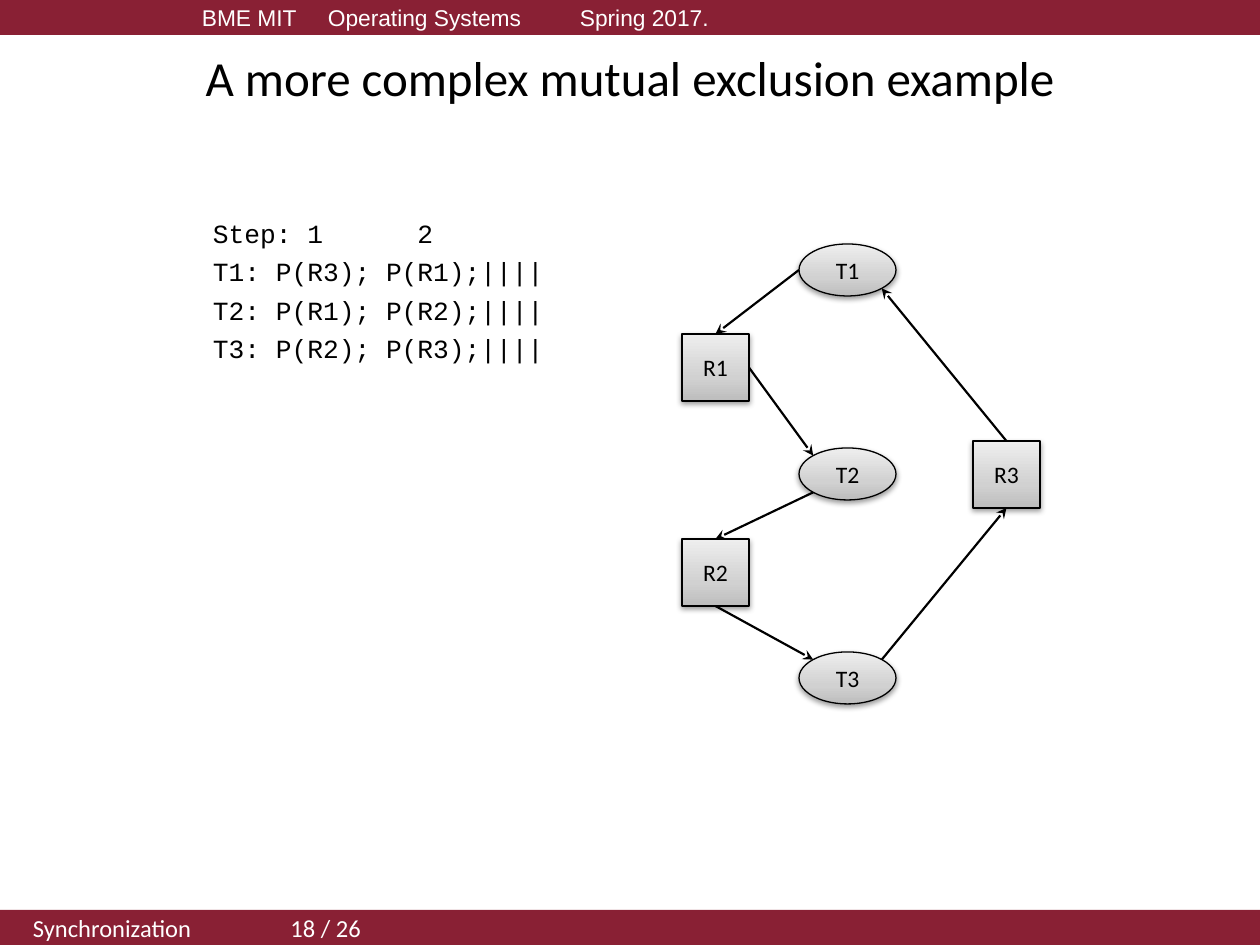
from lxml import etree
from pptx import Presentation
from pptx.dml.color import RGBColor
from pptx.enum.shapes import MSO_CONNECTOR, MSO_SHAPE
from pptx.enum.text import MSO_ANCHOR, PP_ALIGN
from pptx.oxml import parse_xml
from pptx.oxml.ns import qn
from pptx.util import Pt

PX = 914400 / 126
RECT, OVAL = MSO_SHAPE.RECTANGLE, MSO_SHAPE.OVAL
STRAIGHT = MSO_CONNECTOR.STRAIGHT
LEFT, CENTER = PP_ALIGN.LEFT, PP_ALIGN.CENTER
TOP, MIDDLE = MSO_ANCHOR.TOP, MSO_ANCHOR.MIDDLE

COLORS = {"bar": "892034", "ink": "000000", "paper": "FFFFFF",
          "dark": "BDBDBD", "mid": "D1D1D1", "light": "EEEEEE"}
NS = 'xmlns:a="http://schemas.openxmlformats.org/drawingml/2006/main"'
GRADIENT = (f'<a:gradFill {NS} rotWithShape="1"><a:gsLst>'
            + "".join(f'<a:gs pos="{pos}"><a:srgbClr val="{COLORS[name]}"/></a:gs>'
                      for pos, name in ((0, "dark"), (35000, "mid"), (100000, "light")))
            + '</a:gsLst><a:lin ang="16200000" scaled="1"/></a:gradFill>')
SHADOW = (f'<a:effectLst {NS}><a:outerShdw blurRad="40000" dist="20000" dir="5400000" '
          f'rotWithShape="0"><a:srgbClr val="{COLORS["ink"]}"><a:alpha val="38000"/>'
          '</a:srgbClr></a:outerShdw></a:effectLst>')

NODES = {
    "T1": (OVAL, 117, 0), "T2": (OVAL, 117, 204), "T3": (OVAL, 117, 408),
    "R1": (RECT, 0, 90), "R2": (RECT, 0, 295), "R3": (RECT, 291, 197),
}
NODE_SIZES = {OVAL: (97, 52), RECT: (67, 67)}
EDGES = [
    ("R3", "top", "T1", "bottom right"),
    ("R1", "right", "T2", "top left"),
    ("R2", "bottom", "T3", "top left"),
    ("T1", "left", "R1", "top"),
    ("T2", "bottom left", "R2", "top"),
    ("T3", "top right", "R3", "bottom"),
]
SIDES = {"left": (-1, 0), "right": (1, 0), "top": (0, -1), "bottom": (0, 1)}


def emu(*lengths):
    return [round(v * PX) for v in lengths]


def rgb(name):
    return RGBColor.from_string(COLORS[name])


def write(sp, text, size, font="Calibri", color="ink", align=CENTER, anchor=MIDDLE,
          margins=(13, 6), indent=0, space=0):
    tf = sp.text_frame
    tf.word_wrap = True
    tf.vertical_anchor = anchor
    tf.margin_left, tf.margin_top = emu(*margins)
    tf.margin_right, tf.margin_bottom = emu(*margins)
    for i, line in enumerate(text.split("\n")):
        p = tf.paragraphs[0] if i == 0 else tf.add_paragraph()
        p.alignment = align
        p.space_before = Pt(space if i else 0)
        if indent:
            p._p.get_or_add_pPr().set("marL", str(emu(indent)[0]))
        r = p.add_run()
        r.text = line
        r.font.size = Pt(size)
        r.font.name = font
        r.font.color.rgb = rgb(color)


def add_bar(s, box, text, size, **fmt):
    sp = s.shapes.add_shape(RECT, *emu(*box))
    sp.shadow.inherit = False
    sp.fill.solid()
    sp.fill.fore_color.rgb = rgb("bar")
    sp.line.fill.background()
    write(sp, text, size, color="paper", align=LEFT, **fmt)


def add_text(s, box, text, size, **fmt):
    write(s.shapes.add_textbox(*emu(*box)), text, size, **fmt)


def add_node(s, kind, box, label):
    sp = s.shapes.add_shape(kind, *emu(*box))
    sp.line.color.rgb = rgb("ink")
    sp.line.width = Pt(0.75)
    spPr = sp._element.spPr
    spPr.find(qn("a:ln")).addprevious(parse_xml(GRADIENT))
    spPr.append(parse_xml(SHADOW))
    write(sp, label, 13.5, margins=(0, 0))


def add_arrow(s, start, end):
    line = s.shapes.add_connector(STRAIGHT, *emu(*start, *end))
    line.line.color.rgb = rgb("ink")
    line.line.width = Pt(1.25)
    etree.SubElement(line.line._get_or_add_ln(), qn("a:tailEnd"), type="stealth")
    etree.SubElement(line._element.spPr, qn("a:effectLst"))


def anchor_point(box, side):
    x, y, w, h = box
    steps = [SIDES[name] for name in side.split()]
    reach = 0.5 / len(steps) ** 0.5
    dx, dy = (sum(axis) for axis in zip(*steps))
    return x + w * (0.5 + reach * dx), y + h * (0.5 + reach * dy)


def add_graph(s, left, top):
    boxes = {}
    for label, (kind, x, y) in NODES.items():
        boxes[label] = (left + x, top + y, *NODE_SIZES[kind])
        add_node(s, kind, boxes[label], label)
    for source, source_side, target, target_side in EDGES:
        add_arrow(s, anchor_point(boxes[source], source_side),
                  anchor_point(boxes[target], target_side))


def main():
    prs = Presentation()
    prs.slide_width, prs.slide_height = emu(1260, 945)
    s = prs.slides.add_slide(prs.slide_layouts[6])
    add_bar(s, (0, 0, 1260, 35), "BME MIT\tOperating Systems\tSpring 2017.", 13,
            font="Arial", indent=189)
    add_bar(s, (0, 910, 1260, 35), "Synchronization\t\t 18 / 26", 14, indent=20)
    add_text(s, (63, 38, 1134, 77), "A more complex mutual exclusion example", 28)
    add_text(s, (213, 217, 426, 150),
             "Step: 1      2\n"
             "T1: P(R3); P(R1);||||\n"
             "T2: P(R1); P(R2);||||\n"
             "T3: P(R2); P(R3);||||",
             15, font="Courier New", align=LEFT, anchor=TOP, margins=(0, 0), space=4)
    add_graph(s, 682, 244)
    prs.save("out.pptx")


if __name__ == "__main__":
    main()
